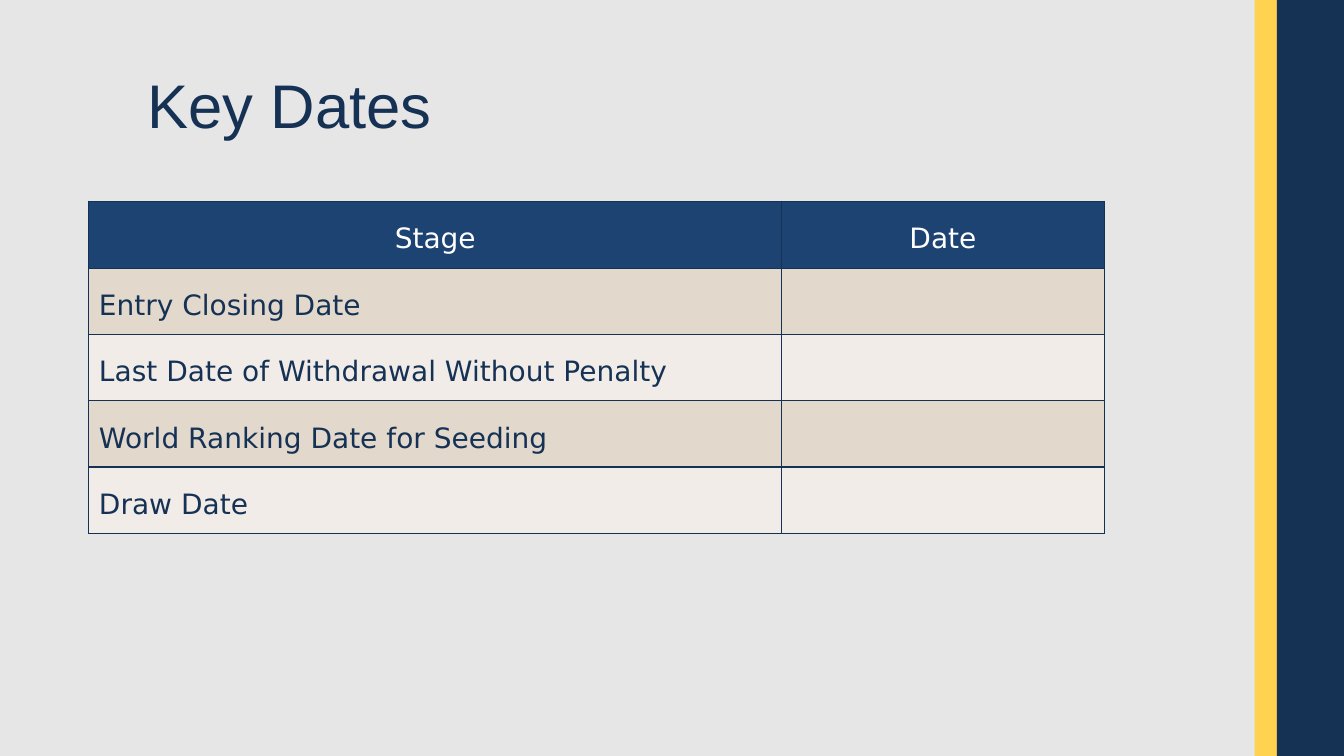
"""Build the Key Dates slide with its schedule table."""
from dataclasses import dataclass

from lxml import etree
from pptx import Presentation
from pptx.dml.color import RGBColor
from pptx.enum.shapes import MSO_SHAPE
from pptx.enum.text import MSO_ANCHOR, PP_ALIGN
from pptx.oxml.ns import qn
from pptx.slide import Slide
from pptx.table import _Cell
from pptx.text.text import TextFrame
from pptx.util import Cm, Pt

RECTANGLE = MSO_SHAPE.RECTANGLE
MIDDLE = MSO_ANCHOR.MIDDLE
LEFT = PP_ALIGN.LEFT
CENTER = PP_ALIGN.CENTER

GREY = RGBColor(0xE7, 0xE6, 0xE6)
YELLOW = RGBColor(0xFF, 0xD2, 0x4F)
NAVY = RGBColor(0x15, 0x32, 0x55)
BLUE = RGBColor(0x1C, 0x43, 0x72)
SAND = RGBColor(0xE3, 0xD8, 0xCC)
CREAM = RGBColor(0xF1, 0xEC, 0xE7)
WHITE = RGBColor(0xFF, 0xFF, 0xFF)

SLIDE_WIDTH = 33.87
SLIDE_HEIGHT = 19.05
STRIPE_RIGHT = 36.88
COLUMN_WIDTHS = (17.46, 8.13)
ROW_HEIGHT = 1.67
HEADER_HEIGHT = 1.69


@dataclass(frozen=True)
class Stripe:
    left: float
    color: RGBColor


@dataclass(frozen=True)
class Stage:
    name: str
    date: str = ""


STRIPES = (Stripe(31.62, YELLOW), Stripe(32.18, NAVY))
HEADER = Stage("Stage", "Date")
STAGES = (
    Stage("Entry Closing Date"),
    Stage("Last Date of Withdrawal Without Penalty"),
    Stage("World Ranking Date for Seeding"),
    Stage("Draw Date"),
)


def write(frame: TextFrame, text: str, *, font: str, size: float, color: RGBColor,
          spacing: float, align: PP_ALIGN = LEFT) -> None:
    paragraph = frame.paragraphs[0]
    paragraph.alignment = align
    paragraph.line_spacing = spacing
    paragraph.font.size = Pt(size)
    if text:
        run = paragraph.add_run()
        run.text = text
        run.font.name = font
        run.font.size = Pt(size)
        run.font.bold = False
        run.font.color.rgb = color


def draw_stripe(slide: Slide, stripe: Stripe) -> None:
    band = slide.shapes.add_shape(RECTANGLE, Cm(stripe.left), 0,
                                  Cm(STRIPE_RIGHT - stripe.left), Cm(SLIDE_HEIGHT))
    band.shadow.inherit = False
    band.fill.solid()
    band.fill.fore_color.rgb = stripe.color
    band.line.fill.background()


def draw_title(slide: Slide) -> None:
    title = slide.shapes.add_textbox(Cm(3.47), Cm(0.89), Cm(24.74), Cm(3.68)).text_frame
    title.word_wrap = True
    title.vertical_anchor = MIDDLE
    write(title, "Key Dates", font="Arial", size=44, color=NAVY, spacing=0.9)


def style_cell(cell: _Cell, fill: RGBColor) -> None:
    properties = cell._tc.get_or_add_tcPr()
    for side in ("lnL", "lnR", "lnT", "lnB"):
        border = etree.SubElement(properties, qn(f"a:{side}"), w=str(Pt(1)))
        solid = etree.SubElement(border, qn("a:solidFill"))
        etree.SubElement(solid, qn("a:srgbClr"), val=str(NAVY))
    cell.fill.solid()
    cell.fill.fore_color.rgb = fill


def draw_schedule(slide: Slide) -> None:
    rows = (HEADER, *STAGES)
    schedule = slide.shapes.add_table(
        len(rows), len(COLUMN_WIDTHS), Cm(2.24), Cm(5.07), Cm(sum(COLUMN_WIDTHS)),
        Cm(HEADER_HEIGHT + ROW_HEIGHT * len(STAGES))).table
    for column, width in zip(schedule.columns, COLUMN_WIDTHS):
        column.width = Cm(width)
    for index, stage in enumerate(rows):
        is_header = stage is HEADER
        schedule.rows[index].height = Cm(HEADER_HEIGHT if is_header else ROW_HEIGHT)
        fill = BLUE if is_header else SAND if index % 2 else CREAM
        for cell, text in zip(schedule.rows[index].cells, (stage.name, stage.date)):
            style_cell(cell, fill)
            write(cell.text_frame, text, font="DejaVu Sans", size=20, spacing=1.5,
                  color=WHITE if is_header else NAVY,
                  align=CENTER if is_header else LEFT)


def main() -> None:
    presentation = Presentation()
    presentation.slide_width = Cm(SLIDE_WIDTH)
    presentation.slide_height = Cm(SLIDE_HEIGHT)
    slide = presentation.slides.add_slide(presentation.slide_layouts[6])
    slide.background.fill.solid()
    slide.background.fill.fore_color.rgb = GREY
    for stripe in STRIPES:
        draw_stripe(slide, stripe)
    draw_title(slide)
    draw_schedule(slide)
    presentation.save("out.pptx")


if __name__ == "__main__":
    main()
